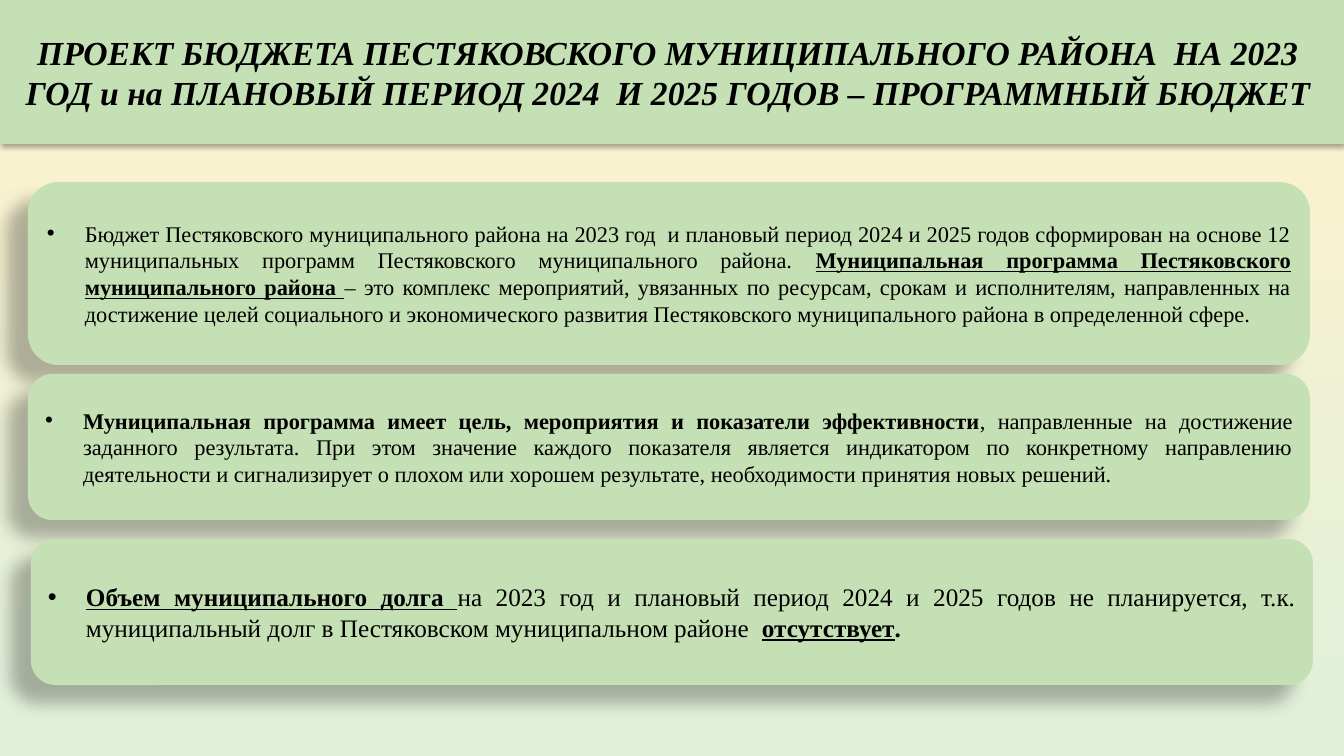
from lxml.etree import SubElement
from pptx import Presentation
from pptx.dml.color import RGBColor
from pptx.enum.shapes import MSO_SHAPE as Shape
from pptx.enum.text import MSO_ANCHOR as Anchor, PP_ALIGN as Align
from pptx.oxml.ns import qn
from pptx.util import Emu, Pt

PX = 914400 / 100.8
WIDTH, HEIGHT = 1344, 756
COLOURS = {"text": "000000", "panel": "C5E0B4", "top": "FFF2CC",
           "bottom": "E2F0D9", "shadow": "000000"}
HEADER_SHADOW = {"opacity": 32, "blur": 3.5, "distance": 2.2, "angle": 90}
CARD_SHADOW = {"opacity": 28, "blur": 11.8, "distance": 19.7, "angle": 141}

TITLE = ("ПРОЕКТ БЮДЖЕТА ПЕСТЯКОВСКОГО МУНИЦИПАЛЬНОГО РАЙОНА  НА 2023  ГОД "
         "и на ПЛАНОВЫЙ ПЕРИОД 2024  И 2025 ГОДОВ – ПРОГРАММНЫЙ БЮДЖЕТ ")
BOLD = {"bold": True}
KEY = {"bold": True, "underline": True}
# Each card: left, top, width, height, text size, spans
CARDS = [
    (28, 182, 1282, 183, 16, [
        ("Бюджет Пестяковского муниципального района на 2023 год  и плановый "
         "период 2024 и 2025 годов сформирован на основе 12 муниципальных "
         "программ Пестяковского муниципального района. ", {}),
        ("Муниципальная программа Пестяковского муниципального района ", KEY),
        ("– это комплекс мероприятий, увязанных по ресурсам, срокам и "
         "исполнителям, направленных на достижение целей социального и "
         "экономического развития Пестяковского муниципального района в "
         "определенной сфере. ", {})]),
    (28, 374, 1282, 146, 16, [
        ("Муниципальная программа имеет цель, мероприятия и показатели "
         "эффективности", BOLD),
        (", направленные на достижение заданного результата. При этом значение "
         "каждого показателя является индикатором по конкретному направлению "
         "деятельности и сигнализирует о плохом или хорошем результате, "
         "необходимости принятия новых решений. ", {})]),
    (31, 539, 1282, 146, 18, [
        ("Объем муниципального долга ", KEY),
        ("на 2023 год и плановый период 2024 и 2025 годов не планируется, т.к. "
         "муниципальный долг в Пестяковском муниципальном районе  ", {}),
        ("отсутствует", KEY),
        (".", BOLD)]),
]


def px(value):
    return Emu(round(value * PX))


def colour(name):
    return RGBColor.from_string(COLOURS[name])


def add_span(para, text, size, bold=False, italic=False, underline=False):
    span = para.add_run()
    span.text = text
    font = span.font
    font.name, font.size = "Times New Roman", Pt(size)
    font.bold, font.italic, font.underline = bold, italic, underline
    font.color.rgb = colour("text")


class SlideBuilder:
    def __init__(self, page):
        self.page = page

    def background(self):
        fill = self.page.background.fill
        fill.gradient()
        fill.gradient_angle = 270
        stops = zip(fill.gradient_stops, ("top", "bottom"), (0, 0.93))
        for stop, name, position in stops:
            stop.color.rgb = colour(name)
            stop.position = position

    def panel(self, kind, left, top, width, height, shadow):
        """Add a filled shape with a shadow and return it with its paragraph."""
        box = self.page.shapes.add_shape(
            kind, px(left), px(top), px(width), px(height))
        box.fill.solid()
        box.fill.fore_color.rgb = colour("panel")
        box.line.fill.background()
        self.cast_shadow(box, **shadow)
        frame = box.text_frame
        frame.word_wrap = True
        frame.vertical_anchor = Anchor.MIDDLE
        return box, frame.paragraphs[0]

    def cast_shadow(self, box, opacity, blur, distance, angle):
        box.shadow.inherit = False
        effects = box.element.spPr.find(qn("a:effectLst"))
        outer = SubElement(effects, qn("a:outerShdw"), {
            "blurRad": str(Pt(blur)), "dist": str(Pt(distance)),
            "dir": str(angle * 60000), "algn": "ctr", "rotWithShape": "0"})
        tint = SubElement(outer, qn("a:srgbClr"), val=COLOURS["shadow"])
        SubElement(tint, qn("a:alpha"), val=str(opacity * 1000))

    def header(self, text):
        _, para = self.panel(Shape.RECTANGLE, 0, 0, WIDTH, 144, HEADER_SHADOW)
        para.alignment = Align.CENTER
        add_span(para, text, 24, bold=True, italic=True)

    def card(self, left, top, width, height, size, spans):
        _, para = self.panel(
            Shape.ROUNDED_RECTANGLE, left, top, width, height, CARD_SHADOW)
        para.alignment = Align.JUSTIFY
        self.bullet(para)
        for text, style in spans:
            add_span(para, text, size, **style)

    def bullet(self, para):
        properties = para._p.get_or_add_pPr()
        properties.set("marL", str(px(38)))
        properties.set("indent", str(-px(38)))
        SubElement(properties, qn("a:buFont"), typeface="Arial")
        SubElement(properties, qn("a:buChar"), char="•")


def main():
    deck = Presentation()
    deck.slide_width, deck.slide_height = px(WIDTH), px(HEIGHT)
    builder = SlideBuilder(deck.slides.add_slide(deck.slide_layouts[6]))
    builder.background()
    builder.header(TITLE)
    for card in CARDS:
        builder.card(*card)
    deck.save("out.pptx")


if __name__ == "__main__":
    main()
